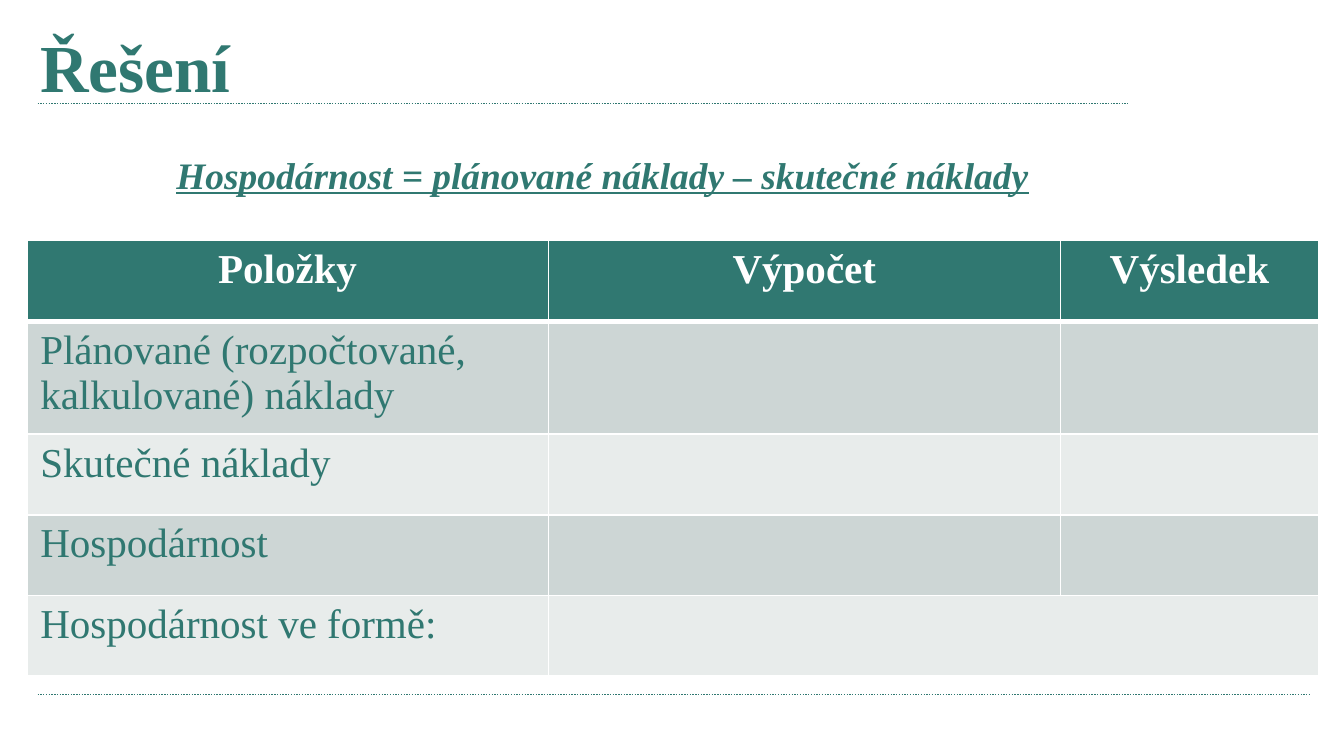
from lxml import etree
from pptx import Presentation
from pptx.dml.color import RGBColor
from pptx.enum import dml, shapes, text
from pptx.oxml.ns import qn
from pptx.util import Inches, Pt

TITLE = "Řešení"
RULE = "Hospodárnost = plánované náklady – skutečné náklady"
HEAD = ["Položky", "Výpočet", "Výsledek"]
ITEMS = [
    "Plánované (rozpočtované, kalkulované) náklady",
    "Skutečné náklady",
    "Hospodárnost",
    "Hospodárnost ve formě:",
]
COLS = [3.88, 3.81, 1.92]
ROWS = [0.6, 0.84, 0.6, 0.6, 0.6]
LINES = [(0.28, 8.39, 0.77), (0.28, 9.75, 5.17)]  # left, right, height on slide

THEME = {
    "font": "Times New Roman",
    "main": "307871", "white": "FFFFFF", "bands": ["CDD6D5", "E8ECEB"],
    "title": {"size": Pt(36), "bold": True},
    "rule": {"size": Pt(20), "bold": True, "italic": True, "underline": True},
    "head": {"size": Pt(22), "bold": True},
    "body": {"size": Pt(22), "bold": False},
}


def color(name):
    return RGBColor.from_string(THEME.get(name, name))


def write(frame, words, style, ink="main", align=text.PP_ALIGN.LEFT):
    par = frame.paragraphs[0]
    par.alignment = align
    run = par.add_run()
    run.text = words
    for key, val in {"name": THEME["font"], **THEME[style]}.items():
        setattr(run.font, key, val)
    run.font.color.rgb = color(ink)


def add_text(slide, area, words, style, **extra):
    frame = slide.shapes.add_textbox(*map(Inches, area)).text_frame
    frame.word_wrap = True
    frame.vertical_anchor = text.MSO_ANCHOR.TOP
    write(frame, words, style, **extra)


def add_line(slide, left, right, y):
    line = slide.shapes.add_connector(
        shapes.MSO_CONNECTOR.STRAIGHT, *map(Inches, (left, y, right, y)))
    line.line.color.rgb = color("main")
    line.line.width = Pt(0.75)
    line.line.dash_style = dml.MSO_LINE.ROUND_DOT
    etree.SubElement(line._element.spPr, qn("a:effectLst"))


def add_edges(cell, widths):
    """Draw white cell borders; widths are points for left, right, top, bottom."""
    props = cell._tc.get_or_add_tcPr()
    for place, (side, width) in enumerate(zip("LRTB", widths)):
        edge = etree.Element(qn("a:ln" + side), w=str(Pt(width)))
        fill = etree.SubElement(edge, qn("a:solidFill"))
        etree.SubElement(fill, qn("a:srgbClr"), val=THEME["white"])
        props.insert(place, edge)


def add_grid(slide):
    area = (0.2, 1.79, sum(COLS), sum(ROWS))
    grid = slide.shapes.add_table(len(ROWS), len(COLS), *map(Inches, area)).table
    for col, width in zip(grid.columns, COLS):
        col.width = Inches(width)
    for row, height in zip(grid.rows, ROWS):
        row.height = Inches(height)
    for r in range(len(ROWS)):
        for c in range(len(COLS)):
            cell = grid.cell(r, c)
            cell.fill.solid()
            cell.fill.fore_color.rgb = color(
                THEME["bands"][(r - 1) % 2] if r else "main")
            add_edges(cell, (1, 1, 3 if r == 1 else 1, 1 if r else 3))
            if r == 0:
                write(cell.text_frame, HEAD[c], "head", "white", text.PP_ALIGN.CENTER)
            elif c == 0:
                write(cell.text_frame, ITEMS[r - 1], "body")
    last = len(ROWS) - 1
    grid.cell(last, 1).merge(grid.cell(last, 2))


def main():
    deck = Presentation()
    deck.slide_width = Inches(10)
    deck.slide_height = deck.slide_width * 9 // 16
    slide = deck.slides.add_slide(deck.slide_layouts[6])
    for line in LINES:
        add_line(slide, *line)
    add_text(slide, (0.2, 0.14, 8.82, 0.79), TITLE, "title")
    add_text(slide, (0.43, 1.08, 8.11, 0.44), RULE, "rule",
             align=text.PP_ALIGN.CENTER)
    add_grid(slide)
    deck.save("out.pptx")


if __name__ == "__main__":
    main()
